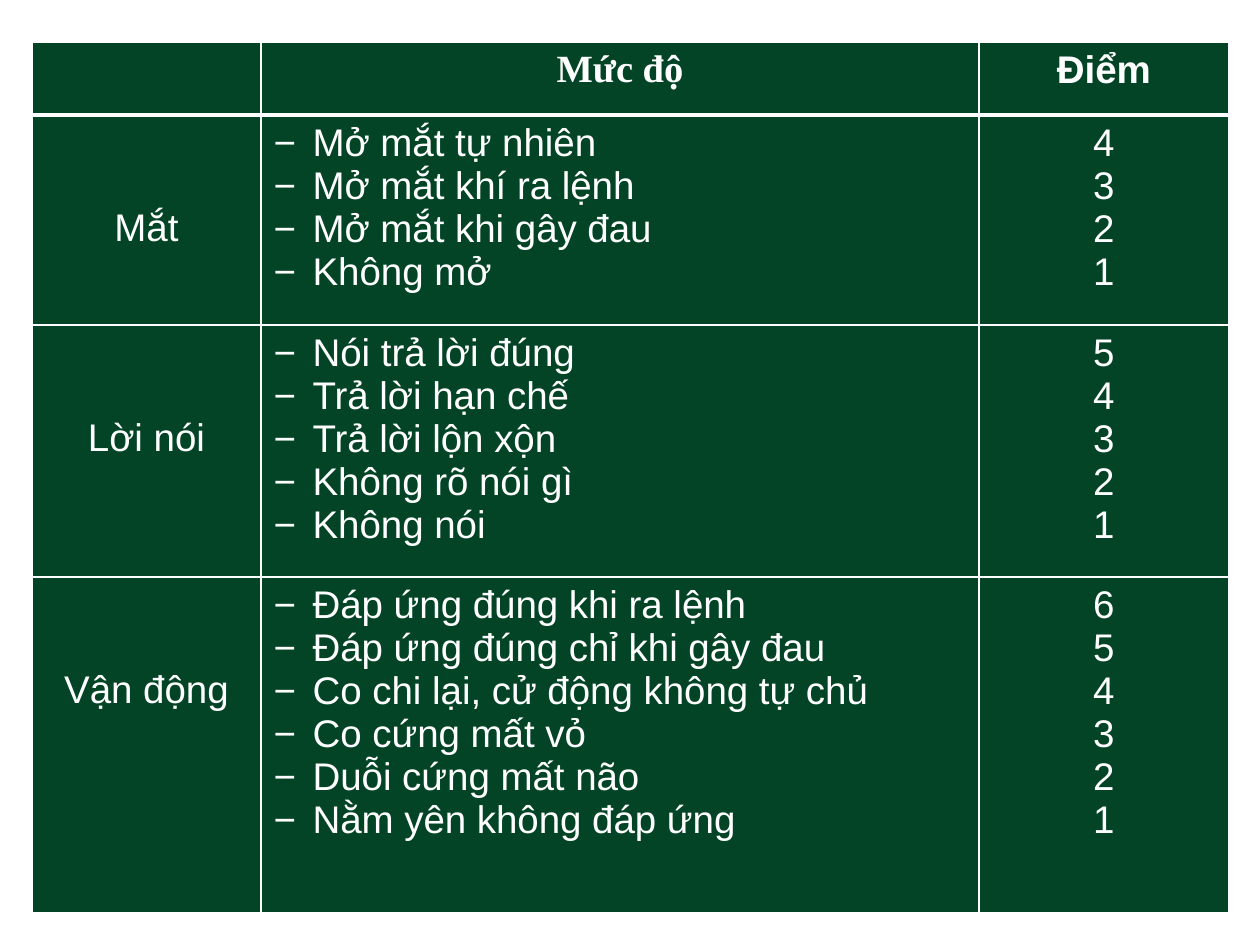
from dataclasses import dataclass

from lxml import etree
from pptx import Presentation
from pptx import util as u
from pptx.dml.color import RGBColor
from pptx.enum import text
from pptx.oxml.ns import qn


@dataclass(frozen=True)
class Theme:
    fill: str = "024425"
    ink: str = "FFFFFF"
    size: int = 22
    font: str = "Arial"
    serif: str = "Times New Roman"
    line: int = 1
    header_line: int = 3


@dataclass(frozen=True)
class Group:
    label: str
    levels: tuple[str, ...]  # best response first, scored down to 1
    height: int


THEME = Theme()
PX_PER_INCH = 126
LEFT, TOP = 32, 42
COLUMNS = (229, 718, 250)
HEADER_HEIGHT = 73
LABEL_TOP = 92  # sets each label level with the third line of its row
INDENT = 39

GROUPS = (
    Group("Mắt", ("Mở mắt tự nhiên", "Mở mắt khí ra lệnh",
                  "Mở mắt khi gây đau", "Không mở"), 210),
    Group("Lời nói", ("Nói trả lời đúng", "Trả lời hạn chế", "Trả lời lộn xộn",
                      "Không rõ nói gì", "Không nói"), 252),
    Group("Vận động", ("Đáp ứng đúng khi ra lệnh", "Đáp ứng đúng chỉ khi gây đau",
                       "Co chi lại, cử động không tự chủ", "Co cứng mất vỏ",
                       "Duỗi cứng mất não", "Nằm yên không đáp ứng"), 336),
)


def px(n: int) -> int:
    return u.Inches(n / PX_PER_INCH)


def style_cell(cell, top: int, bottom: int) -> None:
    """Draw the four borders, then the fill that must follow them."""
    tcPr = cell._tc.get_or_add_tcPr()
    widths = {"lnL": THEME.line, "lnR": THEME.line, "lnT": top, "lnB": bottom}
    for tag, width in widths.items():
        ln = etree.SubElement(tcPr, qn(f"a:{tag}"), w=str(u.Pt(width)))
        solid = etree.SubElement(ln, qn("a:solidFill"))
        etree.SubElement(solid, qn("a:srgbClr"), val=THEME.ink)
    cell.fill.solid()
    cell.fill.fore_color.rgb = RGBColor.from_string(THEME.fill)


def add_dash(p) -> None:
    pPr = p._p.get_or_add_pPr()
    pPr.set("marL", str(px(INDENT)))
    pPr.set("indent", str(-px(INDENT)))
    etree.SubElement(pPr, qn("a:buFont"), typeface=THEME.font)
    etree.SubElement(pPr, qn("a:buChar"), char="−")


def write(cell, lines: tuple[str, ...], dashed: bool = False,
          bold: bool = False, font: str = THEME.font) -> None:
    tf = cell.text_frame
    for i, line in enumerate(lines):
        p = tf.paragraphs[0] if i == 0 else tf.add_paragraph()
        p.alignment = text.PP_ALIGN.LEFT if dashed else text.PP_ALIGN.CENTER
        if dashed:
            add_dash(p)
        r = p.add_run()
        r.text = line
        formats = {"name": font, "size": u.Pt(THEME.size), "bold": bold}
        for name, value in formats.items():
            setattr(r.font, name, value)
        r.font.color.rgb = RGBColor.from_string(THEME.ink)


def main() -> None:
    prs = Presentation()
    prs.slide_width, prs.slide_height = u.Inches(10), u.Inches(7.5)
    s = prs.slides.add_slide(prs.slide_layouts[6])

    # Table grid
    heights = (HEADER_HEIGHT, *(g.height for g in GROUPS))
    table = s.shapes.add_table(len(heights), len(COLUMNS), px(LEFT), px(TOP),
                               px(sum(COLUMNS)), px(sum(heights))).table
    table.horz_banding = False
    for column, width in zip(table.columns, COLUMNS):
        column.width = px(width)
    for i, (row, height) in enumerate(zip(table.rows, heights)):
        row.height = px(height)
        for cell in row.cells:
            style_cell(cell, THEME.header_line if i == 1 else THEME.line,
                       THEME.header_line if i == 0 else THEME.line)

    # Header
    write(table.cell(0, 1), ("Mức độ",), bold=True, font=THEME.serif)
    write(table.cell(0, 2), ("Điểm",), bold=True)

    # Response groups and their scores
    for i, group in enumerate(GROUPS, start=1):
        label, levels, scores = table.rows[i].cells
        label.margin_top = px(LABEL_TOP)
        write(label, (group.label,))
        write(levels, group.levels, dashed=True)
        write(scores, tuple(str(n) for n in range(len(group.levels), 0, -1)))

    prs.save("out.pptx")


if __name__ == "__main__":
    main()
